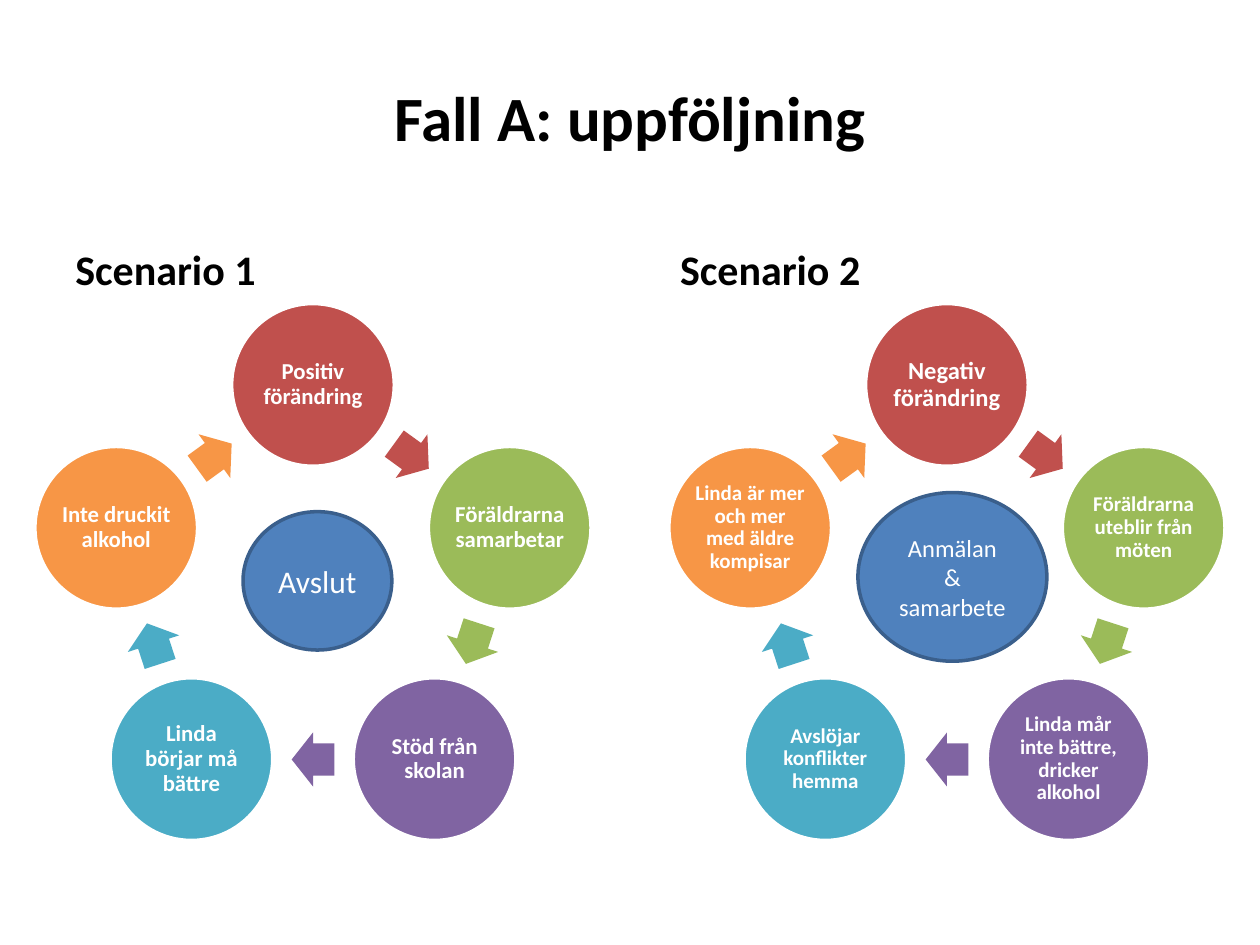
from math import cos, radians, sin

from pptx import Presentation
from pptx.dml.color import RGBColor
from pptx.enum.shapes import MSO_SHAPE
from pptx.enum.text import MSO_ANCHOR, PP_ALIGN
from pptx.util import Cm, Pt

OVAL, ARROW = MSO_SHAPE.OVAL, MSO_SHAPE.RIGHT_ARROW
MIDDLE, BOTTOM = MSO_ANCHOR.MIDDLE, MSO_ANCHOR.BOTTOM
LEFT, CENTER = PP_ALIGN.LEFT, PP_ALIGN.CENTER

FONT = "Calibri"
BLACK = RGBColor(0x00, 0x00, 0x00)
WHITE = RGBColor(0xFF, 0xFF, 0xFF)
BLUE = RGBColor(0x4F, 0x81, 0xBD)
DARK_BLUE = RGBColor(0x3A, 0x5F, 0x8C)
RED = RGBColor(0xC0, 0x50, 0x4D)
GREEN = RGBColor(0x9B, 0xBB, 0x59)
PURPLE = RGBColor(0x80, 0x64, 0xA2)
TEAL = RGBColor(0x4B, 0xAC, 0xC6)
ORANGE = RGBColor(0xF7, 0x96, 0x46)
STEP_COLORS = (RED, GREEN, PURPLE, TEAL, ORANGE)

# Lengths in centimetres
CYCLE_Y = 11.93
STEP_RADIUS, ARROW_RADIUS = 4.17, 3.38
STEP_SIZE = 3.28
ARROW_WIDTH, ARROW_HEIGHT = 0.86, 1.09
STEP_INSET = 0.05

SCENARIOS = (
    {
        "heading": "Scenario 1", "heading_x": 1.27, "cycle_x": 6.31,
        "steps": (("Positiv förändring", 13), ("Föräldrarna samarbetar", 13),
                  ("Stöd från skolan", 13), ("Linda börjar må bättre", 13),
                  ("Inte druckit alkohol", 13)),
        "outcome": ("Avslut", 18), "outcome_box": (6.4, 11.71, 3.0, 2.79),
    },
    {
        "heading": "Scenario 2", "heading_x": 13.46, "cycle_x": 19.09,
        "steps": (("Negativ förändring", 14),
                  ("Föräldrarna uteblir från möten", 12),
                  ("Linda mår inte bättre, dricker alkohol", 12),
                  ("Avslöjar konflikter hemma", 12),
                  ("Linda är mer och mer med äldre kompisar", 12)),
        "outcome": ("Anmälan & samarbete", 14),
        "outcome_box": (19.2, 11.63, 3.81, 3.4),
    },
)


def write_text(shape, text, size, color=WHITE, bold=True, align=CENTER,
               anchor=MIDDLE, inset=None, line_spacing=None):
    frame = shape.text_frame
    frame.word_wrap = True
    frame.vertical_anchor = anchor
    if inset is not None:
        frame.margin_left = frame.margin_right = Cm(inset)
        frame.margin_top = frame.margin_bottom = Cm(inset)
    paragraph = frame.paragraphs[0]
    paragraph.alignment = align
    paragraph.line_spacing = line_spacing
    run = paragraph.add_run()
    run.text = text
    run.font.name = FONT
    run.font.size = Pt(size)
    run.font.bold = bold
    run.font.color.rgb = color


def add_heading(slide, text, left, top, width, height, size, **text_format):
    box = slide.shapes.add_textbox(Cm(left), Cm(top), Cm(width), Cm(height))
    write_text(box, text, size, color=BLACK, **text_format)


def add_centered_shape(slide, kind, x, y, width, height, fill, outline=None):
    """Add a filled shape whose centre lies at x, y."""
    shape = slide.shapes.add_shape(kind, Cm(x - width / 2), Cm(y - height / 2),
                                   Cm(width), Cm(height))
    shape.shadow.inherit = False
    shape.fill.solid()
    shape.fill.fore_color.rgb = fill
    if outline is None:
        shape.line.fill.background()
    else:
        shape.line.color.rgb = outline
        shape.line.width = Pt(2)
    return shape


def point_on_cycle(center_x, radius, angle):
    """Return the point at a clockwise angle from the top of the cycle."""
    turn = radians(angle)
    return center_x + radius * sin(turn), CYCLE_Y - radius * cos(turn)


def add_cycle(slide, center_x, steps):
    step_angle = 360 / len(steps)
    for index, ((text, size), color) in enumerate(zip(steps, STEP_COLORS)):
        angle = index * step_angle
        x, y = point_on_cycle(center_x, STEP_RADIUS, angle)
        step = add_centered_shape(slide, OVAL, x, y, STEP_SIZE, STEP_SIZE,
                                  color, outline=WHITE)
        write_text(step, text, size, inset=STEP_INSET, line_spacing=0.9)

        arrow_angle = angle + step_angle / 2
        x, y = point_on_cycle(center_x, ARROW_RADIUS, arrow_angle)
        arrow = add_centered_shape(slide, ARROW, x, y, ARROW_WIDTH,
                                   ARROW_HEIGHT, color)
        arrow.adjustments[0] = 0.6
        arrow.adjustments[1] = 0.5
        arrow.rotation = arrow_angle


def add_scenario(slide, scenario):
    add_heading(slide, scenario["heading"], scenario["heading_x"], 4.27,
                11.23, 1.78, 24, align=LEFT, anchor=BOTTOM)
    add_cycle(slide, scenario["cycle_x"], scenario["steps"])
    outcome = add_centered_shape(slide, OVAL, *scenario["outcome_box"], BLUE,
                                 outline=DARK_BLUE)
    write_text(outcome, *scenario["outcome"], bold=False)


def main():
    presentation = Presentation()
    presentation.slide_width = Cm(25.4)
    presentation.slide_height = Cm(19.05)
    slide = presentation.slides.add_slide(presentation.slide_layouts[6])
    add_heading(slide, "Fall A: uppföljning", 1.27, 0.76, 22.86, 3.18, 36)
    for scenario in SCENARIOS:
        add_scenario(slide, scenario)
    presentation.save("out.pptx")


if __name__ == "__main__":
    main()
